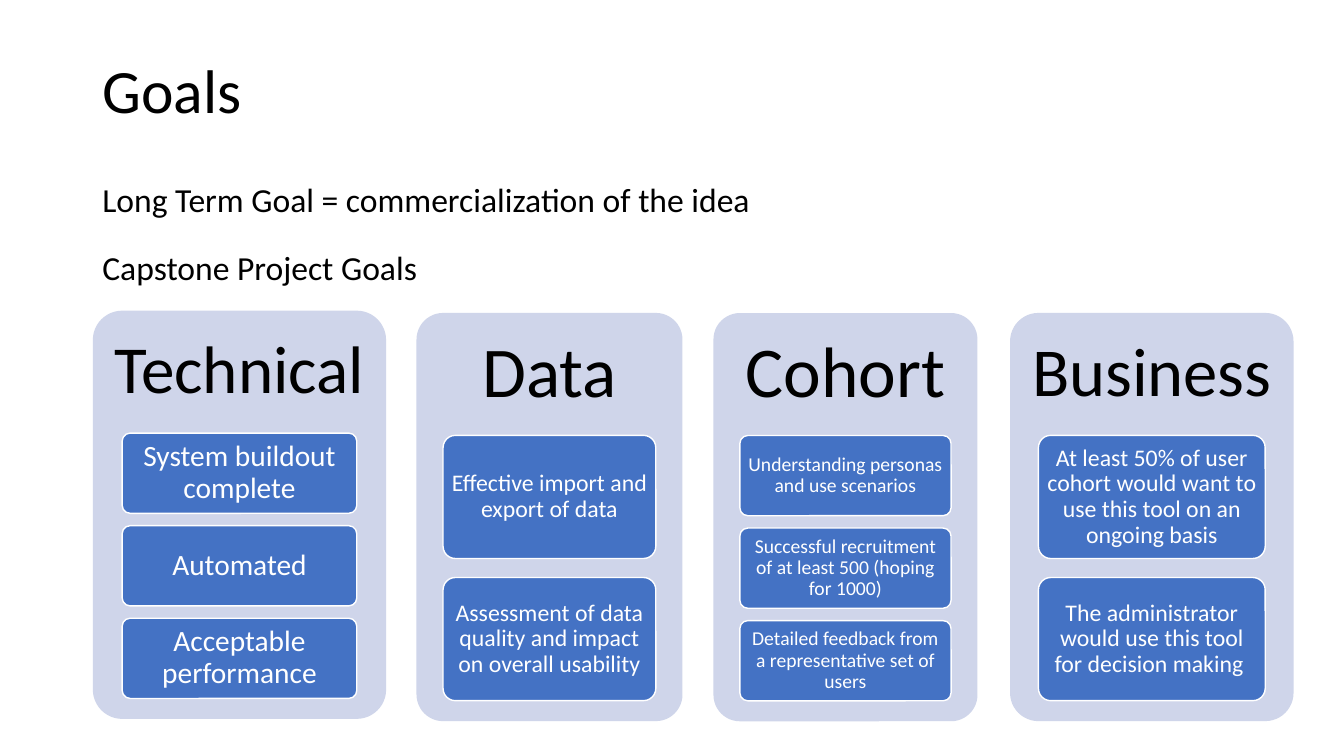
from pptx import Presentation
from pptx.dml.color import RGBColor
from pptx.enum.shapes import MSO_SHAPE as SHAPE
from pptx.enum.text import MSO_ANCHOR as ANCHOR, PP_ALIGN as ALIGN
from pptx.util import Pt

BLACK = RGBColor(0x00, 0x00, 0x00)
WHITE = RGBColor(0xFF, 0xFF, 0xFF)
BLUE = RGBColor(0x44, 0x72, 0xC4)
PALE = RGBColor(0xCF, 0xD5, 0xEA)
FONT = "Calibri"

TITLE = "Goals"
LINES = [
    ("Long Term Goal = commercialization of the idea", 124.6, 481.7),
    ("Capstone Project Goals", 172.8, 247),
]
# heading, heading size, left, top, width, goal size, goals
PANELS = [
    ("Technical", 48, 66.3, 221.9, 209.5, 21,
     ["System buildout complete", "Automated", "Acceptable performance"]),
    ("Data", 51, 297.5, 223.5, 190, 17,
     ["Effective import and export of data",
      "Assessment of data quality and impact on overall usability"]),
    ("Cohort", 51, 509.6, 223.6, 188.6, 14,
     ["Understanding personas and use scenarios",
      "Successful recruitment of at least 500 (hoping for 1000)",
      "Detailed feedback from a representative set of users"]),
    ("Business", 49, 721.5, 223.5, 202.5, 17,
     ["At least 50% of user cohort would want to use this tool on an ongoing basis",
      "The administrator would use this tool for decision making "]),
]

LEFT = 66
PANEL_H = 291.6
HEAD_H = 0.3 * PANEL_H
GOALS_H = 0.65 * PANEL_H
GAP = 2 / 13  # gap between goals, as a share of a goal's height


def write(sp, text, size, color=BLACK, align=ALIGN.LEFT, anchor=ANCHOR.MIDDLE,
          spacing=0.9, inset=(7.2, 3.6), wrap=True):
    tf = sp.text_frame
    tf.word_wrap = wrap
    tf.vertical_anchor = anchor
    tf.margin_left = tf.margin_right = Pt(inset[0])
    tf.margin_top = tf.margin_bottom = Pt(inset[1])
    p = tf.paragraphs[0]
    p.alignment = align
    p.line_spacing = spacing
    r = p.add_run()
    r.text = text
    r.font.name = FONT
    r.font.size = Pt(size)
    r.font.color.rgb = color


def textbox(s, x, y, w, h, text, size, **fmt):
    write(s.shapes.add_textbox(Pt(x), Pt(y), Pt(w), Pt(h)), text, size, **fmt)


def rounded(s, x, y, w, h, fill, line=None):
    sp = s.shapes.add_shape(SHAPE.ROUNDED_RECTANGLE, Pt(x), Pt(y), Pt(w), Pt(h))
    sp.adjustments[0] = 0.1
    sp.shadow.inherit = False
    sp.fill.solid()
    sp.fill.fore_color.rgb = fill
    if line is None:
        sp.line.fill.background()
    else:
        sp.line.color.rgb = line
        sp.line.width = Pt(1)
    return sp


def panel(s, heading, head_size, x, y, w, goal_size, goals):
    rounded(s, x, y, w, PANEL_H, PALE)
    textbox(s, x, y, w, HEAD_H, heading, head_size, align=ALIGN.CENTER,
            inset=(14.4, 14.4))
    n = len(goals)
    goal_h = GOALS_H / (n + GAP * (n - 1))
    for i, goal in enumerate(goals):
        top = y + HEAD_H + i * goal_h * (1 + GAP)
        sp = rounded(s, x + 0.1 * w, top, 0.8 * w, goal_h, BLUE, WHITE)
        write(sp, goal, goal_size, color=WHITE, align=ALIGN.CENTER,
              inset=(0.2 * goal_size, 0.15 * goal_size))


prs = Presentation()
prs.slide_width, prs.slide_height = Pt(960), Pt(540)
s = prs.slides.add_slide(prs.slide_layouts[6])

textbox(s, LEFT, 28.8, 828, 75.6, TITLE, 44)
for text, top, width in LINES:
    textbox(s, LEFT, top, width, 36, text, 24, anchor=ANCHOR.TOP, spacing=1.0,
            wrap=False)
for args in PANELS:
    panel(s, *args)

prs.save("out.pptx")
